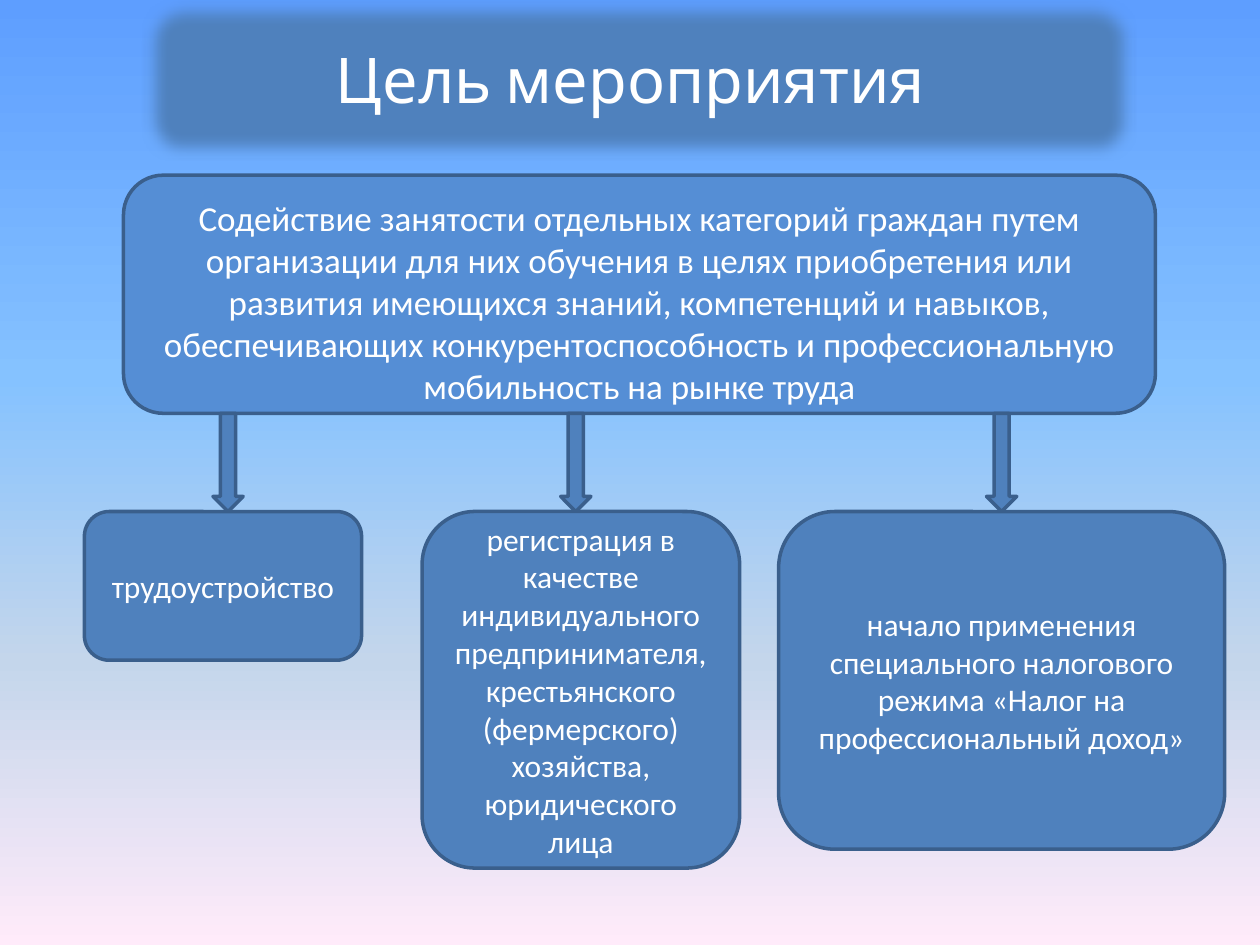
from lxml.etree import SubElement
from pptx import Presentation
from pptx.dml.color import RGBColor
from pptx.enum.shapes import MSO_SHAPE as Preset
from pptx.enum.text import MSO_ANCHOR as Anchor, PP_ALIGN as Align
from pptx.oxml.ns import qn
from pptx.util import Inches, Pt

COLORS = {"box": "4F81BD", "goal": "558ED5", "border": "3A5F8C", "text": "FFFFFF"}
SKY = [(0, "5E9EFF"), (40, "85C2FF"), (70, "C4D6EB"), (100, "FFEBFA")]
COLUMNS, ROWS = 10, 7.5
TITLE_LAYOUT = 5


def write(frame, text, size=18, font="Calibri", color="text", top=0.05):
    frame.word_wrap = True
    frame.vertical_anchor = Anchor.MIDDLE
    frame.margin_top = Inches(top)
    paragraph = frame.paragraphs[0]
    paragraph.alignment = Align.CENTER
    run = paragraph.add_run()
    run.text = text
    run.font.size = Pt(size)
    run.font.name = font
    run.font.color.rgb = RGBColor.from_string(COLORS[color])


class Deck:
    """Holds the style and the current slide; lengths are grid columns and rows."""

    def __init__(self):
        self.show = Presentation()
        self.show.slide_width, self.show.slide_height = Inches(COLUMNS), Inches(ROWS)
        self.slide = self.show.slides.add_slide(self.show.slide_layouts[TITLE_LAYOUT])

    def place(self, left, top, width, height):
        column = self.show.slide_width / COLUMNS
        row = self.show.slide_height / ROWS
        return (round(left * column), round(top * row),
                round(width * column), round(height * row))

    def background(self, stops):
        fill = self.slide.background.fill
        fill.gradient()
        fill.gradient_angle = 270
        stop_list = self.slide.element.find(".//" + qn("a:gsLst"))
        for old in list(stop_list):
            stop_list.remove(old)
        for percent, color in stops:
            stop = SubElement(stop_list, qn("a:gs"), pos=str(percent * 1000))
            SubElement(stop, qn("a:srgbClr"), val=color)

    def block(self, preset, area, fill="box"):
        block = self.slide.shapes.add_shape(preset, *self.place(*area))
        block.shadow.inherit = False
        block.fill.solid()
        block.fill.fore_color.rgb = RGBColor.from_string(COLORS[fill])
        block.line.color.rgb = RGBColor.from_string(COLORS["border"])
        block.line.width = Pt(2)
        return block

    def box(self, area, text, fill="box", **style):
        write(self.block(Preset.ROUNDED_RECTANGLE, area, fill).text_frame, text, **style)

    def arrow(self, center, top, bottom, width=0.24):
        self.block(Preset.DOWN_ARROW, (center - width / 2, top, width, bottom - top))

    def title(self, text, area, banner_area):
        banner = self.block(Preset.ROUNDED_RECTANGLE, banner_area)
        effects = banner.element.find(".//" + qn("a:effectLst"))
        SubElement(effects, qn("a:softEdge"), rad=str(Pt(9)))
        title = self.slide.shapes.title
        title.left, title.top, title.width, title.height = self.place(*area)
        write(title.text_frame, text, size=36, font="Cabin")
        banner.element.addnext(title.element)


def main():
    deck = Deck()
    deck.background(SKY)

    # Heading on a soft-edged banner
    deck.title("Цель мероприятия", (0.83, 0, 8.35, 1.25), (1.14, 0, 7.87, 1.26))

    # Goal
    goal_top, goal_bottom, results_top = 1.39, 3.28, 4.06
    deck.box(
        (0.98, goal_top, 8.19, goal_bottom - goal_top),
        "Содействие занятости отдельных категорий граждан путем организации для них "
        "обучения в целях приобретения или развития имеющихся знаний, компетенций и "
        "навыков, обеспечивающих конкурентоспособность и профессиональную мобильность "
        "на рынке труда",
        fill="goal", size=20, top=0.16)

    # Results: left, width, height, arrow centre, text
    results = [
        (0.67, 2.2, 1.18, 1.81, "трудоустройство"),
        (3.35, 2.52, 2.83, 4.57,
         "регистрация в качестве индивидуального предпринимателя, крестьянского "
         "(фермерского) хозяйства, юридического лица"),
        (6.18, 3.54, 2.68, 7.95,
         "начало применения специального налогового режима "
         "«Налог на профессиональный доход»"),
    ]
    for left, width, height, center, text in results:
        deck.arrow(center, goal_bottom, results_top)
        deck.box((left, results_top, width, height), text)

    deck.show.save("out.pptx")


if __name__ == "__main__":
    main()
